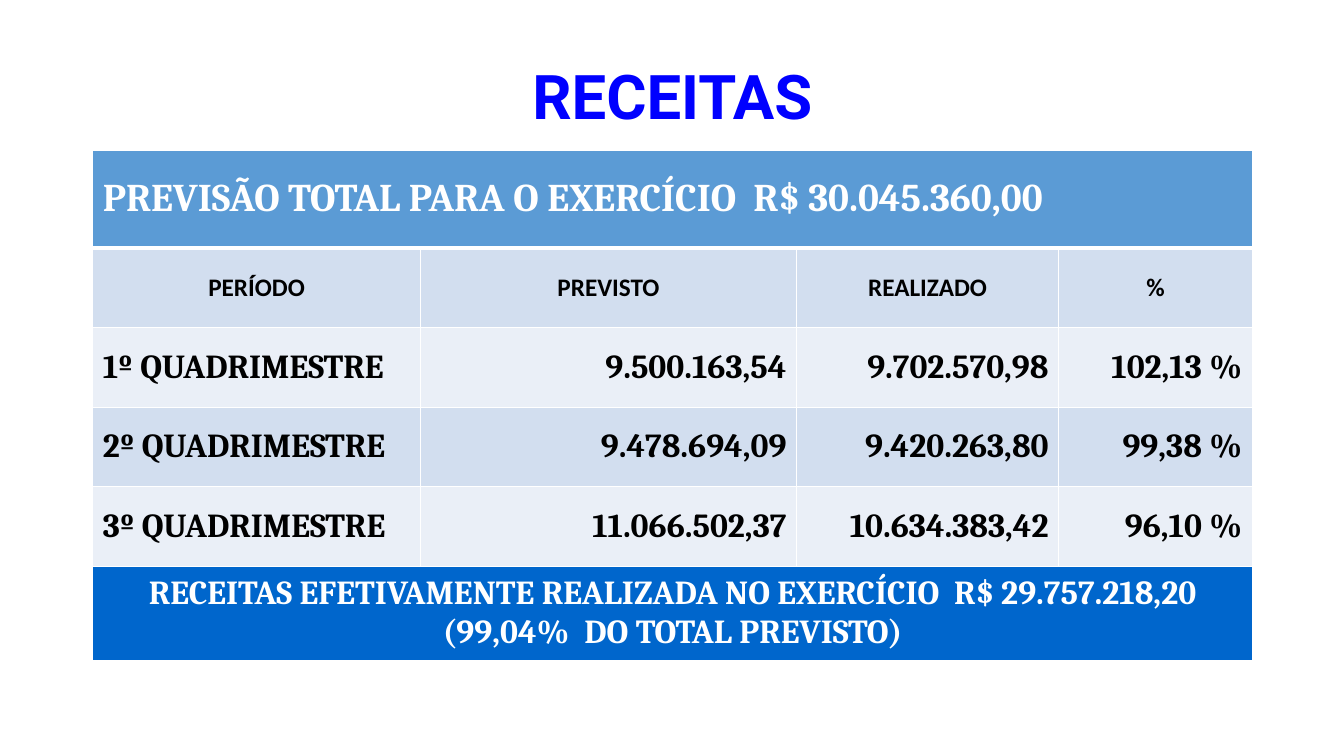
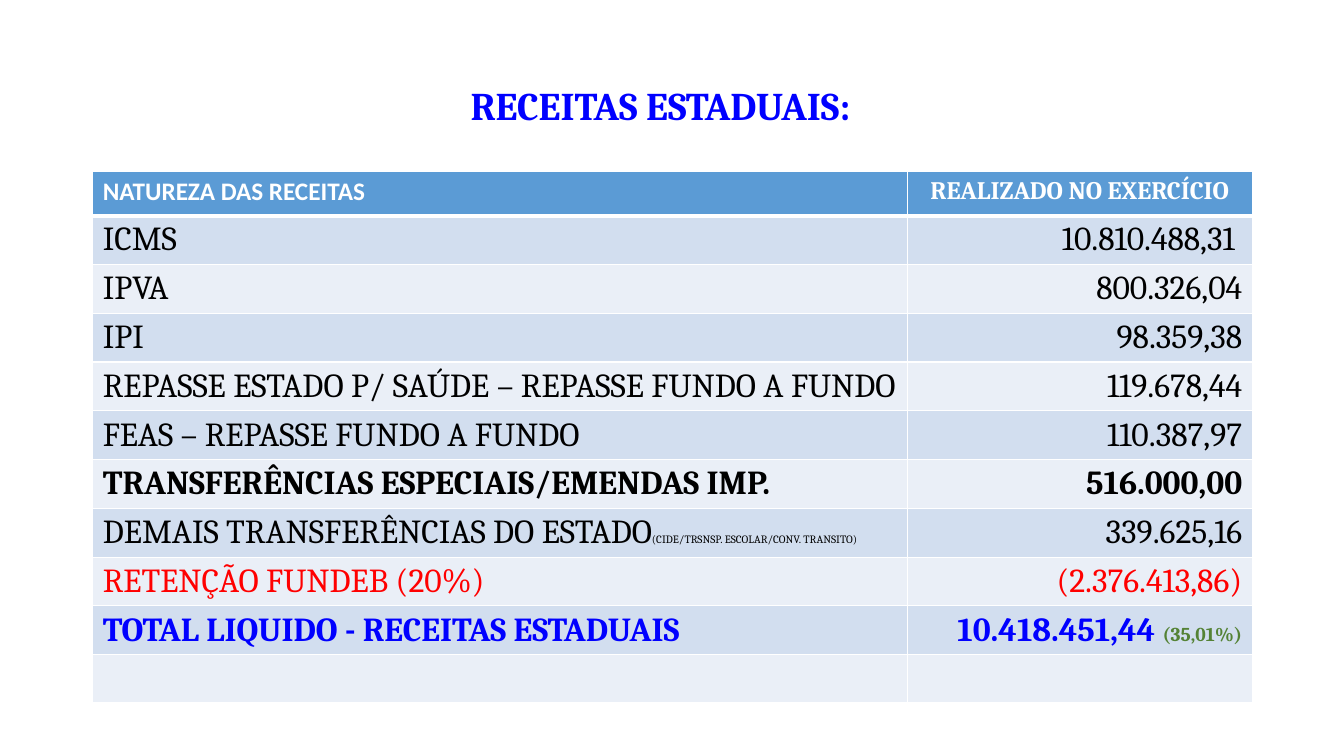
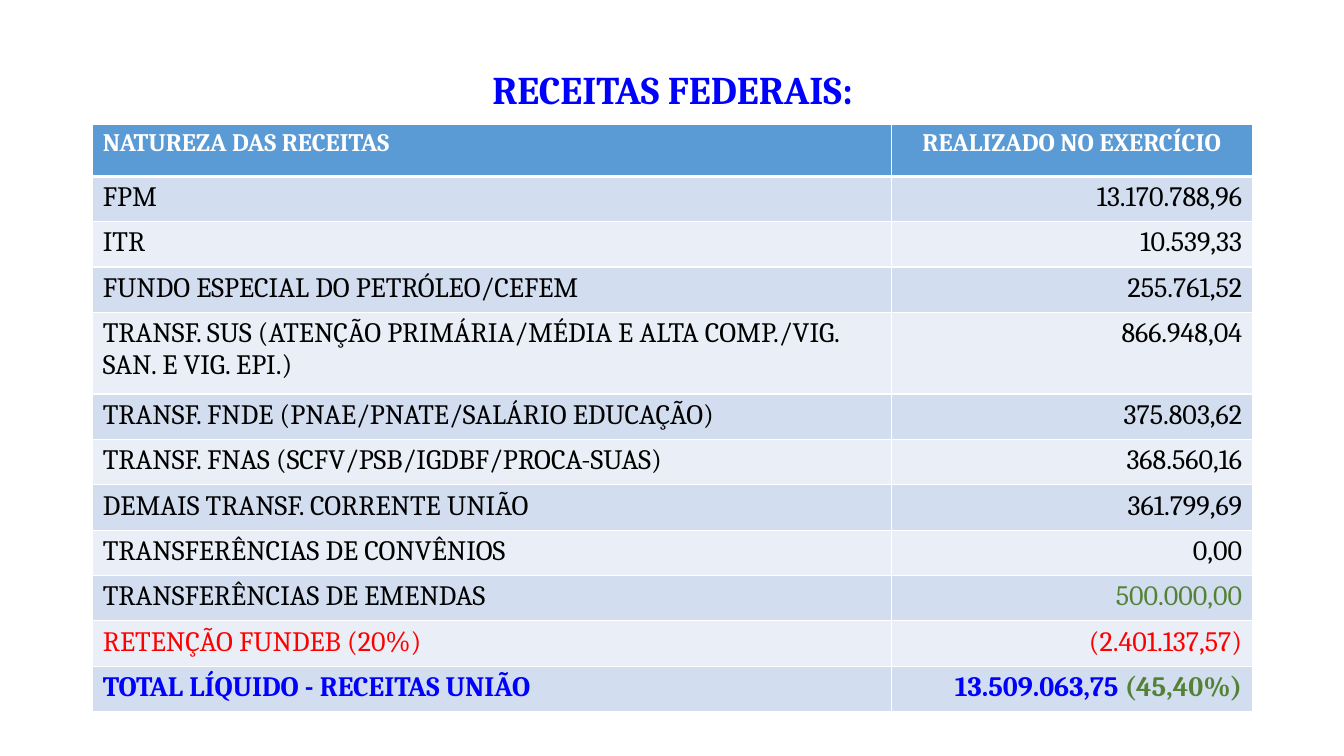
"""Build three slides of municipal revenue tables."""
from dataclasses import dataclass, replace

from lxml import etree
from pptx import Presentation
from pptx.dml.color import RGBColor
from pptx.enum.text import MSO_ANCHOR, MSO_AUTO_SIZE, PP_ALIGN
from pptx.oxml.ns import qn
from pptx.util import Inches, Pt

LEFT, CENTER, RIGHT = PP_ALIGN.LEFT, PP_ALIGN.CENTER, PP_ALIGN.RIGHT
TOP, MIDDLE = MSO_ANCHOR.TOP, MSO_ANCHOR.MIDDLE
NO_AUTOFIT = MSO_AUTO_SIZE.NONE
TITLE_ONLY = 5


@dataclass(frozen=True)
class Style:
    size: int
    font: str = "Cambria"
    color: str = "000000"
    bold: bool = False


class Theme:
    white, blue, red, green = "FFFFFF", "0000FF", "FF0000", "548235"
    header, total = "5B9BD5", "0066CC"
    bands = ("D2DEEF", "EAEFF7")
    thin, thick = Pt(1), Pt(3)
    left, width = 0.92, 11.5
    main_title = Style(44, "Roboto", blue, True)
    title = Style(28, "Cambria", blue, True)
    forecast = Style(28, "Cambria", white, True)
    columns = Style(18, "Calibri", bold=True)
    figures = Style(24, bold=True)
    summary = Style(24, "Cambria", white, True)
    heading = Style(18, "Cambria", white, True)
    heading_sans = Style(18, "Calibri", white, True)
    state = Style(24)
    federal = Style(20)


def colored(style, color, bold=False):
    return replace(style, color=color, bold=bold)


STATE_TOTAL = colored(Theme.state, Theme.blue, True)
FEDERAL_TOTAL = colored(Theme.federal, Theme.blue, True)
PAIR = (LEFT, RIGHT)
HEADING_PAIR = (LEFT, CENTER)
QUARTET = (LEFT, RIGHT, RIGHT, RIGHT)

SLIDES = [
    {
        "title": ("RECEITAS", Theme.main_title, 0.4, 1.18),
        "title_insets": {},
        "top": 1.49, "anchor": MIDDLE,
        "columns": [3.25, 3.73, 2.6, 1.92],
        "heights": [0.97] + [0.79] * 4 + [0.93],
        "rows": [
            (Theme.forecast, (LEFT,), ["PREVISÃO TOTAL PARA O EXERCÍCIO  R$ 30.045.360,00"]),
            (Theme.columns, (CENTER,) * 4, ["PERÍODO", "PREVISTO", "REALIZADO", "%"]),
            (Theme.figures, QUARTET, ["1º QUADRIMESTRE", "9.500.163,54", "9.702.570,98", "102,13 %"]),
            (Theme.figures, QUARTET, ["2º QUADRIMESTRE", "9.478.694,09", "9.420.263,80", "99,38 %"]),
            (Theme.figures, QUARTET, ["3º QUADRIMESTRE", "11.066.502,37", "10.634.383,42", "96,10 %"]),
            (Theme.summary, (CENTER,), [
                "RECEITAS EFETIVAMENTE REALIZADA NO EXERCÍCIO  R$ 29.757.218,20 "
                "(99,04%  DO TOTAL PREVISTO)"]),
        ],
    },
    {
        "title": ("RECEITAS ESTADUAIS:", Theme.title, 0.47, 1.05),
        "title_insets": {"margin_right": 0.34, "margin_top": 0.2},
        "top": 1.7, "anchor": TOP,
        "columns": [8.08, 3.42],
        "heights": [0.44] + [0.48] * 10,
        "rows": [
            (Theme.heading, HEADING_PAIR, [
                [("NATUREZA DAS RECEITAS", Theme.heading_sans)], "REALIZADO NO EXERCÍCIO"]),
            (Theme.state, PAIR, ["ICMS", "10.810.488,31 "]),
            (Theme.state, PAIR, ["IPVA", "800.326,04"]),
            (Theme.state, PAIR, ["IPI", "98.359,38"]),
            (Theme.state, PAIR, ["REPASSE ESTADO P/ SAÚDE – REPASSE FUNDO A FUNDO", "119.678,44"]),
            (Theme.state, PAIR, ["FEAS – REPASSE FUNDO A FUNDO", "110.387,97"]),
            (Theme.figures, PAIR, ["TRANSFERÊNCIAS ESPECIAIS/EMENDAS IMP.", "516.000,00"]),
            (Theme.state, PAIR, [
                [("DEMAIS TRANSFERÊNCIAS DO ESTADO", Theme.state),
                 ("(CIDE/TRSNSP. ESCOLAR/CONV. TRANSITO)", Style(8))], "339.625,16"]),
            (colored(Theme.state, Theme.red), PAIR, ["RETENÇÃO FUNDEB (20%)", "(2.376.413,86)"]),
            (STATE_TOTAL, PAIR, [
                "TOTAL LIQUIDO - RECEITAS ESTADUAIS",
                [("10.418.451,44 ", STATE_TOTAL),
                 ("(35,01%)", Style(14, color=Theme.green, bold=True))]]),
            (Theme.state, PAIR, [[], []]),
        ],
    },
    {
        "title": ("RECEITAS FEDERAIS:", Theme.title, 0.55, 0.73),
        "title_insets": {},
        "top": 1.23, "anchor": TOP,
        "columns": [7.92, 3.58],
        "heights": [0.52] + [0.45] * 3 + [0.81] + [0.45] * 7,
        "rows": [
            (Theme.heading, HEADING_PAIR, ["NATUREZA DAS RECEITAS", "REALIZADO NO EXERCÍCIO"]),
            (Theme.federal, PAIR, ["FPM", "13.170.788,96"]),
            (Theme.federal, PAIR, ["ITR", "10.539,33"]),
            (Theme.federal, PAIR, ["FUNDO ESPECIAL DO PETRÓLEO/CEFEM", "255.761,52"]),
            (Theme.federal, PAIR, [
                "TRANSF. SUS (ATENÇÃO PRIMÁRIA/MÉDIA E ALTA COMP./VIG. SAN. E VIG. EPI.)",
                "866.948,04"]),
            (Theme.federal, PAIR, ["TRANSF. FNDE (PNAE/PNATE/SALÁRIO EDUCAÇÃO)", "375.803,62"]),
            (Theme.federal, PAIR, ["TRANSF. FNAS (SCFV/PSB/IGDBF/PROCA-SUAS)", "368.560,16"]),
            (Theme.federal, PAIR, ["DEMAIS TRANSF. CORRENTE UNIÃO", "361.799,69"]),
            (Theme.federal, PAIR, ["TRANSFERÊNCIAS DE CONVÊNIOS", "0,00"]),
            (Theme.federal, PAIR, [
                "TRANSFERÊNCIAS DE EMENDAS",
                [("500.000,00", colored(Theme.federal, Theme.green))]]),
            (colored(Theme.federal, Theme.red), PAIR, ["RETENÇÃO FUNDEB (20%)", "(2.401.137,57)"]),
            (FEDERAL_TOTAL, PAIR, [
                "TOTAL LÍQUIDO - RECEITAS UNIÃO",
                [("13.509.063,75 ", FEDERAL_TOTAL),
                 ("(45,40%)", colored(Theme.federal, Theme.green, True))]]),
        ],
    },
]


def add_run(paragraph, text, style):
    run = paragraph.add_run()
    run.text = text
    run.font.size = Pt(style.size)
    run.font.name = style.font
    run.font.bold = style.bold
    run.font.color.rgb = RGBColor.from_string(style.color)


def set_borders(cell, top, bottom):
    properties = cell._tc.get_or_add_tcPr()
    widths = {"a:lnL": Theme.thin, "a:lnR": Theme.thin, "a:lnT": top, "a:lnB": bottom}
    for position, (tag, width) in enumerate(widths.items()):
        line = etree.Element(qn(tag), w=str(int(width)))
        fill = etree.SubElement(line, qn("a:solidFill"))
        etree.SubElement(fill, qn("a:srgbClr"), val=Theme.white)
        properties.insert(position, line)


def add_title(slide, text, style, top, height, insets):
    title = slide.shapes.title
    title.left, title.top = Inches(Theme.left), Inches(top)
    title.width, title.height = Inches(Theme.width), Inches(height)
    frame = title.text_frame
    frame.auto_size = NO_AUTOFIT
    frame.vertical_anchor = MIDDLE
    for side, inset in insets.items():
        setattr(frame, side, Inches(inset))
    paragraph = frame.paragraphs[0]
    paragraph.alignment = CENTER
    paragraph.line_spacing = 0.9
    add_run(paragraph, text, style)


def row_fill(index, style):
    if index == 0:
        return Theme.header
    return Theme.total if style == Theme.summary else Theme.bands[(index - 1) % 2]


def add_revenue_table(slide, content):
    rows, columns, heights = content["rows"], content["columns"], content["heights"]
    table = slide.shapes.add_table(
        len(rows), len(columns), Inches(Theme.left), Inches(content["top"]),
        Inches(Theme.width), Inches(sum(heights))).table
    for column, width in zip(table.columns, columns):
        column.width = Inches(width)
    for index, (style, alignments, texts) in enumerate(rows):
        table.rows[index].height = Inches(heights[index])
        for cell in table.rows[index].cells:
            cell.fill.solid()
            cell.fill.fore_color.rgb = RGBColor.from_string(row_fill(index, style))
            cell.vertical_anchor = content["anchor"]
            set_borders(cell, Theme.thick if index == 1 else Theme.thin,
                        Theme.thick if index == 0 else Theme.thin)
        if len(texts) == 1:
            table.cell(index, 0).merge(table.cell(index, len(columns) - 1))
        for position, (alignment, text) in enumerate(zip(alignments, texts)):
            paragraph = table.cell(index, position).text_frame.paragraphs[0]
            paragraph.alignment = alignment
            runs = [(text, style)] if isinstance(text, str) else text
            for run_text, run_style in runs:
                add_run(paragraph, run_text, run_style)


def main():
    presentation = Presentation()
    presentation.slide_width, presentation.slide_height = Inches(13.33), Inches(7.5)
    for content in SLIDES:
        slide = presentation.slides.add_slide(presentation.slide_layouts[TITLE_ONLY])
        add_title(slide, *content["title"], content["title_insets"])
        add_revenue_table(slide, content)
    presentation.save("out.pptx")


if __name__ == "__main__":
    main()
